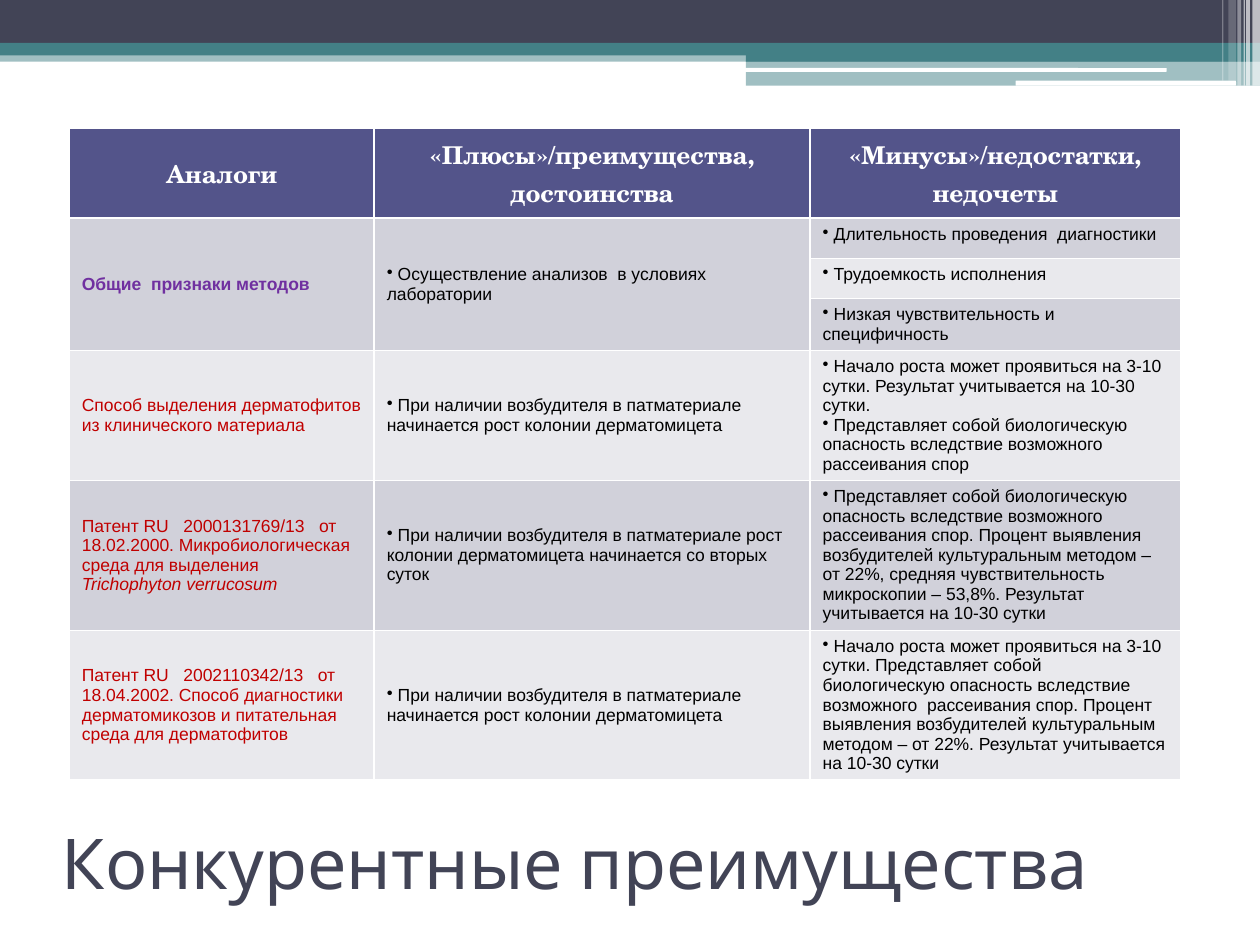
from pptx import Presentation
from pptx.dml.color import RGBColor
from pptx.enum.shapes import MSO_SHAPE as Kind
from pptx.enum.text import MSO_ANCHOR as Anchor, MSO_AUTO_SIZE as Fit, PP_ALIGN as Align
from pptx.oxml.ns import qn
from pptx.util import Inches, Pt
from lxml.etree import SubElement as Sub

DARK, TEAL, WHITE, BLACK = "424456", "438086", "FFFFFF", "000000"
HEAD, BANDS = "53548A", ("D1D1DA", "E9E9ED")
VIOLET, RED = "7030A0", "C00000"


def paint(fill, hue, alpha=100):
    fill.solid()
    fill.fore_color.rgb = RGBColor.from_string(hue)
    if alpha < 100:
        node = fill._xPr.find(qn("a:solidFill"))[0]
        Sub(node, qn("a:alpha"), val=str(alpha * 1000))


def write(para, text, size, face, hue, bold=False, slant=False):
    run = para.add_run()
    run.text = text
    font = run.font
    font.size, font.name, font.bold, font.italic = Pt(size), face, bold, slant
    paint(font.fill, hue)


deck = Presentation()
deck.slide_width, deck.slide_height = Inches(10), Inches(7.5)
unit = deck.slide_width // 1000
slide = deck.slides.add_slide(deck.slide_layouts[5])

bars = [
    (0, 40, 1000, 9, TEAL, 50),
    (0, 0, 1000, 34, DARK, 100),
    (0, 34, 1000, 10, TEAL, 100),
    (592, 39, 408, 10, TEAL, 100),
    (592, 48, 408, 20, TEAL, 50),
    (591, 54, 335, 3, WHITE, 100),
    (806, 64, 175, 4, WHITE, 100),
    (994, 0, 6, 68, WHITE, 65),
    (989, 0, 3, 68, WHITE, 65),
    (987, 0, 1, 68, WHITE, 60),
    (982, 0, 3, 68, WHITE, 40),
    (975, 0, 6, 64, WHITE, 20),
    (970, 0, 1, 64, WHITE, 30),
]
for *box, hue, alpha in bars:
    pill = hue == WHITE and alpha == 100
    kind = Kind.ROUNDED_RECTANGLE if pill else Kind.RECTANGLE
    bar = slide.shapes.add_shape(kind, *[n * unit for n in box])
    bar.shadow.inherit = False
    bar.line.fill.background()
    paint(bar.fill, hue, alpha)

title = slide.shapes.title
title.left, title.top, title.width, title.height = [n * unit for n in (39, 633, 895, 102)]
frame = title.text_frame
frame.auto_size, frame.vertical_anchor = Fit.NONE, Anchor.MIDDLE
frame.paragraphs[0].alignment = Align.LEFT
write(frame.paragraphs[0], "Конкурентные преимущества", 40, "Karla", DARK)

cols = (242, 346, 294)
rows = (70, 32, 32, 41, 103, 119, 119)
heads = ("Аналоги", "«Плюсы»/преимущества, достоинства", "«Минусы»/недостатки, недочеты")
growth = "При наличии возбудителя в патматериале начинается рост колонии дерматомицета"
start = "Начало роста может проявиться на 3-10 сутки."
risk = "Представляет собой биологическую опасность вследствие возможного  рассеивания спор"
share = "Процент выявления возбудителей культуральным методом – от 22%"
result = "Результат учитывается на 10-30 сутки"
names = {
    1: ["Общие  признаки методов"],
    4: ["Способ выделения дерматофитов из клинического материала"],
    5: ["Патент RU   2000131769/13   от 18.02.2000. Микробиологическая среда для выделения ",
        "Trichophyton verrucosum"],
    6: ["Патент RU   2002110342/13   от 18.04.2002. Способ диагностики дерматомикозов "
        "и питательная среда для дерматофитов"],
}
pros = {
    1: ["Осуществление анализов  в условиях лаборатории"],
    4: [growth],
    5: ["При наличии возбудителя в патматериале рост колонии дерматомицета "
        "начинается со вторых суток"],
    6: [growth],
}
cons = {
    1: ["Длительность проведения  диагностики"],
    2: ["Трудоемкость исполнения"],
    3: ["Низкая чувствительность и специфичность"],
    4: [f"{start} {result}.", risk],
    5: [f"{risk}. {share}, средняя чувствительность микроскопии – 53,8%. {result}"],
    6: [f"{start} {risk}. {share}. {result}"],
}

area = [n * unit for n in (55, 102, sum(cols), sum(rows))]
grid = slide.shapes.add_table(len(rows), len(cols), *area).table
for col, wide in zip(grid.columns, cols):
    col.width = wide * unit
for row, tall in zip(grid.rows, rows):
    row.height = tall * unit
for c in (0, 1):
    grid.cell(1, c).merge(grid.cell(3, c))

for c, text in enumerate(heads):
    cell = grid.cell(0, c)
    paint(cell.fill, HEAD)
    cell.vertical_anchor = Anchor.MIDDLE
    para = cell.text_frame.paragraphs[0]
    para.alignment, para.line_spacing = Align.CENTER, Pt(22)
    write(para, text, 14, "TeX Gyre Schola", WHITE, True)

for r in range(1, len(rows)):
    for c in range(len(cols)):
        paint(grid.cell(r, c).fill, BANDS[(r - 1) % 2])

for r, parts in names.items():
    cell = grid.cell(r, 0)
    cell.vertical_anchor = Anchor.MIDDLE
    for i, text in enumerate(parts):
        write(cell.text_frame.paragraphs[0], text, 10, "Arial",
              VIOLET if r == 1 else RED, r == 1, i > 0)

for c, side in ((1, pros), (2, cons)):
    for r, items in side.items():
        cell = grid.cell(r, c)
        cell.vertical_anchor = Anchor.MIDDLE if c == 1 else Anchor.TOP
        for i, text in enumerate(items):
            body = cell.text_frame
            para = body.add_paragraph() if i else body.paragraphs[0]
            props = para._p.get_or_add_pPr()
            props.set("marL", "0")
            props.set("indent", "0")
            Sub(props, qn("a:buChar"), char="•")
            write(para, " " + text, 10, "Arial", BLACK)

deck.save("out.pptx")
